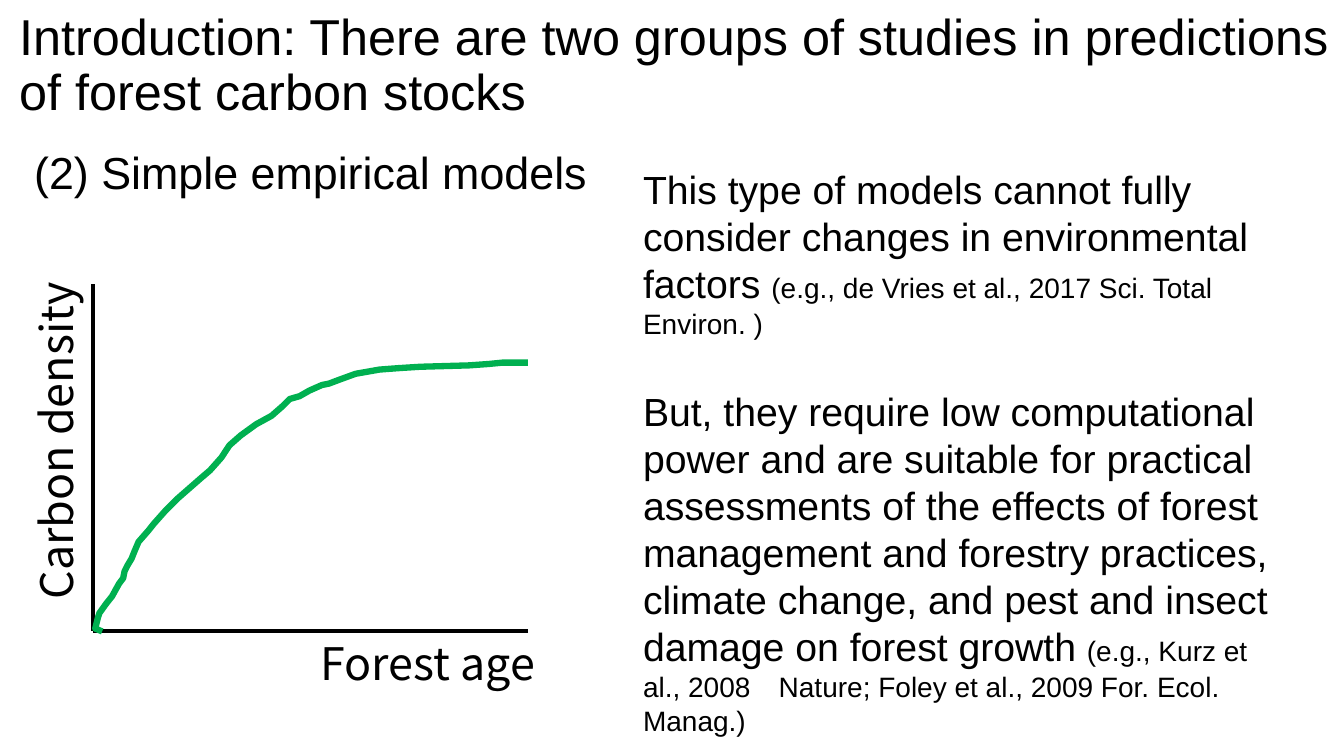
import pptx
import pptx.util
import pptx.dml.color
import pptx.enum.shapes
import pptx.enum.text
import pptx.oxml

Pt = pptx.util.Pt
BLACK = pptx.dml.color.RGBColor(0x00, 0x00, 0x00)
GREEN = pptx.dml.color.RGBColor(0x00, 0xB0, 0x50)
SANS = "Arial"
NOTO = "Noto Sans CJK JP"

# Growth of carbon density with forest age, in points on the slide
GROWTH = [
    (73.4, 450.7), (68.4, 448.6), (69.8, 441.4), (70.6, 437.8), (75.6, 431.3),
    (79.9, 425.5), (85, 416.9), (87.8, 412.6), (88.6, 407.5), (91.4, 403.9),
    (93.6, 398.9), (96.5, 393.8), (99.4, 386.6), (105.8, 378.7), (110.2, 373.7),
    (118.1, 364.8), (127.4, 356.4), (142.6, 342), (150.5, 335.5), (158.1, 326.7),
    (164.2, 318.5), (171.6, 310.8), (182.9, 303.1), (193.7, 296.6), (202.3, 290.2),
    (206.6, 285.1), (213.8, 283), (221.4, 278.9), (229.7, 275), (235.4, 273.6),
    (243.4, 270.7), (254.2, 267.1), (271.4, 264.2), (284.4, 262.8), (300.2, 262.1),
    (334.8, 260.6), (349.2, 259.9), (358.6, 259.2), (376.6, 259.2),
]

LIMITS = [
    ("This type of models cannot fully consider changes in environmental factors ", 28),
    ("(e.g., de Vries et al., 2017 Sci. Total Environ. )", 20),
]
MERITS = [
    ("But, they require low computational power and are suitable for practical "
     "assessments of the effects of forest management and forestry practices, "
     "climate change, and pest and insect damage on forest growth ", 28),
    ("(e.g., Kurz et al., 2008　Nature; Foley et al., 2009 For. Ecol. Manag.)", 20),
]


def write(para, text, size=32, font=SANS, color=BLACK):
    run = para.add_run()
    run.text = text
    run.font.size = Pt(size)
    run.font.name = font
    run.font.color.rgb = color


def add_box(slide, left, top, width, height, turn=0):
    box = slide.shapes.add_textbox(Pt(left), Pt(top), Pt(width), Pt(height))
    box.rotation = turn
    frame = box.text_frame
    frame.word_wrap = True
    frame.auto_size = pptx.enum.text.MSO_AUTO_SIZE.SHAPE_TO_FIT_TEXT
    return frame


def add_title(slide, text):
    title = slide.shapes.title
    title.left, title.top = Pt(6.5), Pt(5)
    title.width, title.height = Pt(975.6), Pt(93.6)
    frame = title.text_frame
    frame.word_wrap = True
    frame.auto_size = pptx.enum.text.MSO_AUTO_SIZE.NONE
    frame.vertical_anchor = pptx.enum.text.MSO_ANCHOR.TOP
    para = frame.paragraphs[0]
    para.alignment = pptx.enum.text.PP_ALIGN.LEFT
    para.line_spacing = 0.9
    para.space_before = Pt(0)
    write(para, text, size=36)


def add_axis(slide, x1, y1, x2, y2):
    axis = slide.shapes.add_connector(
        pptx.enum.shapes.MSO_CONNECTOR.STRAIGHT, Pt(x1), Pt(y1), Pt(x2), Pt(y2))
    axis.line.color.rgb = BLACK
    axis.line.width = Pt(3)
    props = axis._element.spPr
    props.append(pptx.oxml.parse_xml(
        '<a:effectLst xmlns:a="http://schemas.openxmlformats.org/drawingml/2006/main"/>'))


def add_curve(slide, points):
    path = slide.shapes.build_freeform(*points[0], scale=Pt(1))
    path.add_line_segments(points[1:], close=False)
    curve = path.convert_to_shape()
    curve.fill.background()
    curve.line.color.rgb = GREEN
    curve.line.width = Pt(4.5)
    curve.shadow.inherit = False


def main():
    deck = pptx.Presentation()
    deck.slide_width, deck.slide_height = Pt(960), Pt(540)
    slide = deck.slides.add_slide(deck.slide_layouts[5])

    # Heading
    add_title(slide, "Introduction: There are two groups of studies in "
                     "predictions of forest carbon stocks")

    # Sketch of the growth curve
    add_axis(slide, 66.2, 203, 66.2, 450.7)
    add_axis(slide, 377.3, 450.7, 66.2, 450.7)
    add_curve(slide, GROWTH)
    frame = add_box(slide, 221.8, 450.7, 180, 46)
    write(frame.paragraphs[0], "Forest age", font=NOTO)
    frame = add_box(slide, -85.7, 286.6, 251.3, 46, turn=270)
    write(frame.paragraphs[0], "Carbon density", font=NOTO)

    # Model group and its remarks
    frame = add_box(slide, 17.3, 100, 562.3, 46)
    write(frame.paragraphs[0], "(2) Simple empirical models")
    frame = add_box(slide, 452.2, 114.5, 473.8, 429)
    for para, runs in ((frame.paragraphs[0], LIMITS), (frame.add_paragraph(), MERITS)):
        for text, size in runs:
            write(para, text, size=size)
    frame.paragraphs[1].space_before = Pt(33.6)

    deck.save("out.pptx")


if __name__ == "__main__":
    main()
